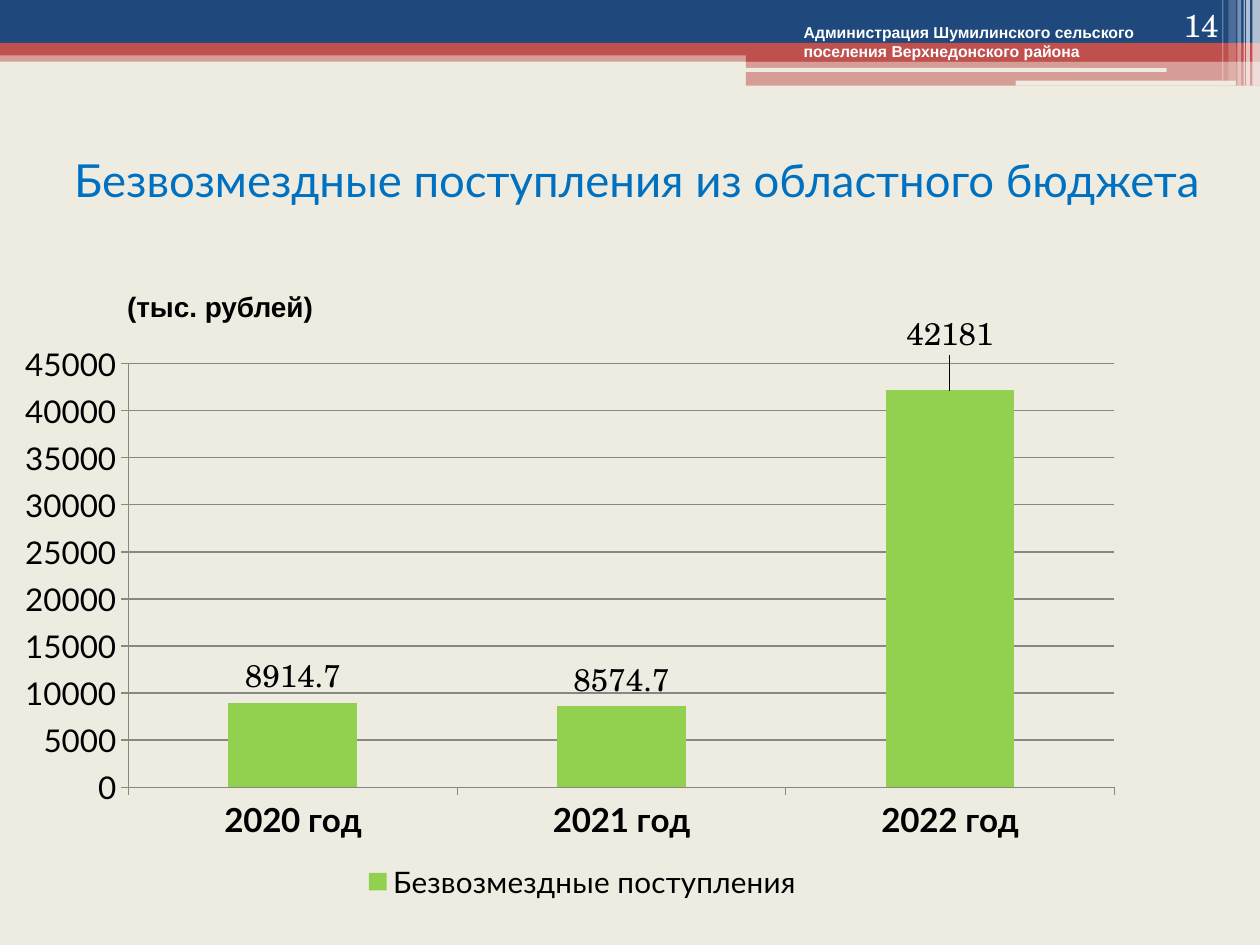
from lxml.etree import SubElement
from pptx import Presentation
from pptx.chart.data import CategoryChartData
from pptx.dml.color import RGBColor
from pptx.enum.chart import XL_CHART_TYPE as CT, XL_LABEL_POSITION as LP
from pptx.enum.chart import XL_LEGEND_POSITION as LEG, XL_TICK_MARK as TM
from pptx.enum.shapes import MSO_SHAPE as SH
from pptx.enum.text import MSO_ANCHOR as MA, PP_ALIGN as PA
from pptx.oxml import parse_xml
from pptx.oxml.ns import nsdecls, qn
from pptx.util import Inches, Pt

COLS, ROWS = 100, 75
CELL = Inches(0.1)
COLORS = {"paper": "EEECE1", "navy": "1F497D", "red": "C0504D", "white": "FFFFFF",
          "blue": "0070C0", "black": "000000", "green": "92D050", "grid": "878787"}


def rgb(name):
    """Return the named palette colour."""
    return RGBColor.from_string(COLORS[name])


def place(box, x, y, w, h):
    """Turn cells relative to a box into slide lengths."""
    return [round(n * CELL) for n in (box[0] + x, box[1] + y, w, h)]


def style(font, size, name, color="black", bold=False):
    """Format a font."""
    font.size, font.name, font.bold = Pt(size), name, bold
    font.color.rgb = rgb(color)


def add_bar(s, box, rect, color, alpha=100, shape=SH.RECTANGLE):
    """Add a borderless filled bar, optionally see-through."""
    sp = s.shapes.add_shape(shape, *place(box, *rect))
    sp.shadow.inherit = False
    sp.line.fill.background()
    sp.fill.solid()
    sp.fill.fore_color.rgb = rgb(color)
    if alpha < 100:
        clr = sp.fill._xPr.find(qn("a:solidFill"))[0]
        SubElement(clr, qn("a:alpha")).set("val", str(alpha * 1000))


def add_text(s, rect, text, size, name, color, bold=False, align=PA.LEFT, anchor=MA.TOP):
    """Add a wrapped one-paragraph text box."""
    tf = s.shapes.add_textbox(*place((0, 0), *rect)).text_frame
    tf.word_wrap, tf.vertical_anchor = True, anchor
    p = tf.paragraphs[0]
    p.text, p.alignment = text, align
    style(p.font, size, name, color, bold)


def add_header(s, box):
    """Draw the bands, slots and stripes across the top."""
    width = box[2]
    half = 59.2
    for rect, color, alpha in [
        ((0, 4, width, 0.9), "red", 50),
        ((0, 0, width, 3.4), "navy", 100),
        ((0, 3.4, width, 1), "red", 100),
        ((half, 3.9, width - half, 1), "red", 100),
        ((half, 4.8, width - half, 2), "red", 50),
    ]:
        add_bar(s, box, rect, color, alpha)
    for rect in [(59.1, 5.4, 33.5, 0.3), (80.6, 6.4, 17.5, 0.4)]:
        add_bar(s, box, rect, "paper", shape=SH.ROUNDED_RECTANGLE)
    for x, w, h, alpha in [(99.4, 0.6, 6.8, 65), (98.9, 0.3, 6.8, 65), (98.7, 0.1, 6.8, 60),
                           (98.2, 0.3, 6.8, 40), (97.5, 0.6, 6.4, 20), (97, 0.1, 6.4, 30)]:
        add_bar(s, box, (x, 0, w, h), "white", alpha)


def add_title(s, box):
    """Fill and position the title placeholder."""
    sp = s.shapes.title
    sp.left, sp.top, sp.width, sp.height = place((0, 0), *box)
    tf = sp.text_frame
    tf.vertical_anchor = MA.MIDDLE
    p = tf.paragraphs[0]
    p.text, p.alignment = "Безвозмездные поступления из областного бюджета", PA.CENTER
    style(p.font, 26, "Lato", "blue")


def manual_layout(**values):
    """Build a manual chart layout from its element values."""
    parts = "".join(f'<c:{k} val="{v}"/>' for k, v in values.items())
    return parse_xml(f'<c:layout {nsdecls("c")}><c:manualLayout>{parts}'
                     '</c:manualLayout></c:layout>')


def add_revenue_chart(s, box):
    """Add the column chart of yearly revenue."""
    data = CategoryChartData()
    data.categories = ["2020 год", "2021 год", "2022 год"]
    data.add_series("Безвозмездные поступления", (8914.7, 8574.7, 42181))
    chart = s.shapes.add_chart(CT.COLUMN_CLUSTERED, *place((0, 0), *box), data).chart
    style(chart.font, 18, "TeX Gyre Schola")
    chart.has_title = False
    chart.has_legend = True
    legend = chart.legend
    legend.position, legend.include_in_layout = LEG.BOTTOM, False
    style(legend.font, 17, "Lato")

    cat, val = chart.category_axis, chart.value_axis
    style(cat.tick_labels.font, 19, "Lato", bold=True)
    style(val.tick_labels.font, 18, "Lato")
    val.minimum_scale, val.maximum_scale, val.major_unit = 0, 45000, 5000
    val.has_major_gridlines = True
    for axis in (cat, val):
        axis.major_tick_mark = TM.OUTSIDE
    for line in (cat.format.line, val.format.line, val.major_gridlines.format.line):
        line.color.rgb, line.width = rgb("grid"), Pt(0.75)

    plot = chart.plots[0]
    plot.gap_width, plot.vary_by_categories = 155, False
    series = plot.series[0]
    series.format.fill.solid()
    series.format.fill.fore_color.rgb = rgb("green")
    labels = series.data_labels
    labels.show_value, labels.position = True, LP.OUTSIDE_END
    style(labels.font, 18, "TeX Gyre Schola")
    raised = series.points[2].data_label
    raised.position = LP.OUTSIDE_END
    style(raised.font, 18, "TeX Gyre Schola")
    labels._element.find(qn("c:dLbl")).insert(1, manual_layout(x=0, y=-0.05))

    area = chart._chartSpace.chart.plotArea
    for old in area.findall(qn("c:layout")):
        area.remove(old)
    area.insert(0, manual_layout(layoutTarget="inner", xMode="edge", yMode="edge",
                                 x=0.07, y=0.05, w=0.89, h=0.72))
    frame = area.find(qn("c:layout"))[0]
    for key, share in zip("xywh", (0.09, 0.085, 0.89, 0.715)):
        frame.find(qn(f"c:{key}")).set("val", str(share))


def main():
    """Build and save the slide."""
    prs = Presentation()
    prs.slide_width, prs.slide_height = COLS * CELL, ROWS * CELL
    s = prs.slides.add_slide(prs.slide_layouts[5])
    s.background.fill.solid()
    s.background.fill.fore_color.rgb = rgb("paper")
    add_header(s, (0, 0, COLS, 6.8))
    add_title(s, (1.2, 8.4, 98.8, 11.7))
    add_text(s, (9.1, 22.5, 18.1, 3.7), "(тыс. рублей)", 16, "Arial", "black", bold=True)
    add_text(s, (62.8, 1.3, 31.1, 4),
             "Администрация Шумилинского сельского поселения Верхнедонского района",
             9, "Arial", "white", bold=True)
    add_revenue_chart(s, (2, 24.6, 88.2, 47.3))
    add_text(s, (89.4, 0, 8.3, 4), "14", 18, "TeX Gyre Schola", "white",
             align=PA.RIGHT, anchor=MA.BOTTOM)
    prs.save("out.pptx")


if __name__ == "__main__":
    main()
